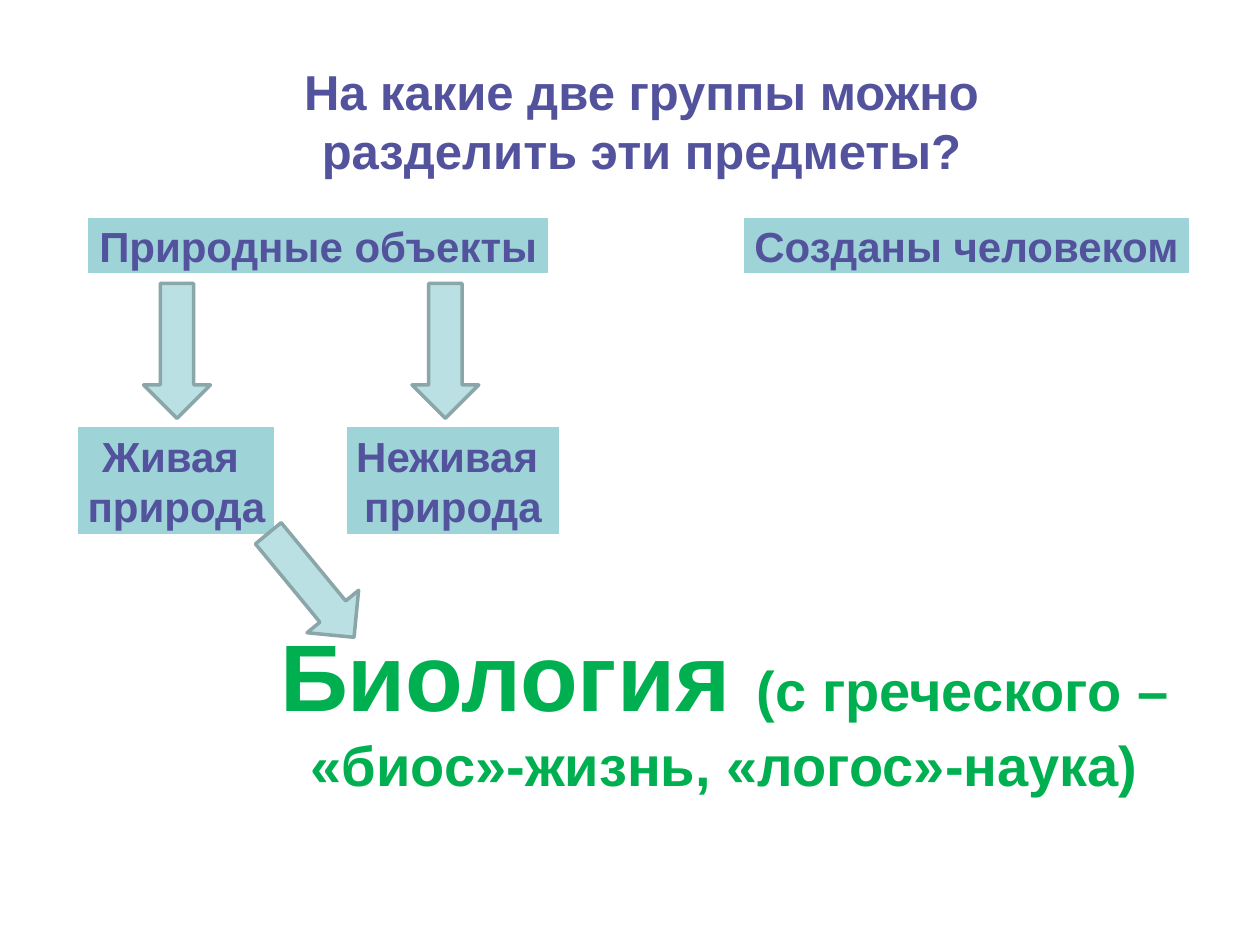
from pptx import Presentation
from pptx.dml.color import RGBColor
from pptx.enum.shapes import MSO_SHAPE
from pptx.enum.text import MSO_ANCHOR, MSO_AUTO_SIZE, PP_ALIGN
from pptx.util import Inches, Pt

# Content: each line is a list of (text, size) runs
TITLE = [[("На какие две группы можно ", 28)], [("разделить эти предметы? ", 28)]]
BIOLOGY = [
    [("Биология ", 54), ("(с греческого –", 32)],
    [("«биос»-жизнь, «логос»-наука)", 32)],
]
# Boxes: lines, row, left, width
BOXES = [
    (["Природные объекты"], "groups", 0.67, 3.71),
    (["Созданы человеком"], "groups", 5.87, 3.6),
    (["Живая ", "природа"], "nature", 0.59, 1.62),
    (["Неживая ", "природа"], "nature", 2.72, 1.75),
]
ROWS = {"groups": (1.7, 0.5), "nature": (3.36, 0.91)}  # top, height

COLORS = {"text": "52529D", "box": "9ED3D7", "border": "FFFFFF",
          "arrow": "BBE0E3", "outline": "8AA6A8", "biology": "00B050"}

# Arrows start in the left column and step evenly to the right
ARROW_W, ARROW_H = 0.53, 1.07
ARROW_LEFT, ARROW_STEP = 1.14, 1.065
ARROWS = [(0, 2.25, 0), (1, 4.11, 320.5), (2, 2.25, 0)]  # step, top, rotation


def rgb(name):
    return RGBColor.from_string(COLORS[name])


def place(s, left, top, width, height):
    s.left, s.top, s.width, s.height = map(Inches, (left, top, width, height))


def write(s, lines, color="text", anchor=MSO_ANCHOR.TOP):
    tf = s.text_frame
    tf.word_wrap = False
    tf.auto_size = MSO_AUTO_SIZE.NONE
    tf.vertical_anchor = anchor
    for i, line in enumerate(lines):
        p = tf.add_paragraph() if i else tf.paragraphs[0]
        p.alignment = PP_ALIGN.CENTER
        for text, size in line:
            r = p.add_run()
            r.text = text
            r.font.name, r.font.size, r.font.bold = "Arial", Pt(size), True
            r.font.color.rgb = rgb(color)


def add_shape(slide, kind, box, fill, line, width):
    s = slide.shapes.add_shape(kind, *map(Inches, box))
    s.shadow.inherit = False
    s.fill.solid()
    s.fill.fore_color.rgb = rgb(fill)
    s.line.color.rgb = rgb(line)
    s.line.width = Pt(width)
    return s


def main():
    prs = Presentation()
    prs.slide_width, prs.slide_height = Inches(10), Inches(7.5)
    slide = prs.slides.add_slide(prs.slide_layouts[5])

    # Question
    title = slide.shapes.title
    place(title, 2.28, 0.44, 5.73, 1.04)
    write(title, TITLE)

    # Groups and their kinds
    for lines, row, left, width in BOXES:
        top, height = ROWS[row]
        s = add_shape(slide, MSO_SHAPE.RECTANGLE, (left, top, width, height),
                      "box", "border", 4.5)
        write(s, [[(text, 24)] for text in lines], anchor=MSO_ANCHOR.MIDDLE)

    # Meaning of the word
    s = slide.shapes.add_textbox(*map(Inches, (2.09, 4.85, 7.32, 1.55)))
    write(s, BIOLOGY, color="biology")

    # Arrows
    for step, top, rotation in ARROWS:
        left = ARROW_LEFT + step * ARROW_STEP
        s = add_shape(slide, MSO_SHAPE.DOWN_ARROW, (left, top, ARROW_W, ARROW_H),
                      "arrow", "outline", 2)
        s.rotation = rotation

    prs.save("out.pptx")


if __name__ == "__main__":
    main()
